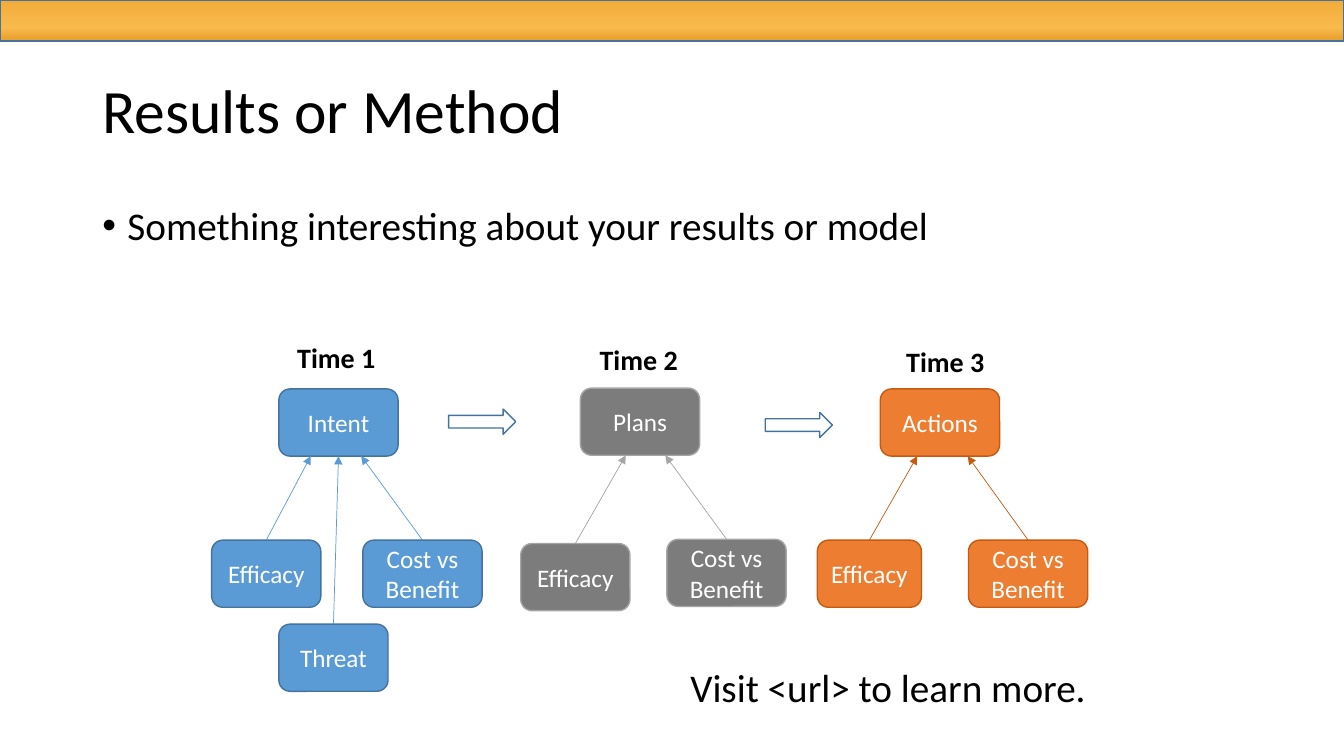
from copy import deepcopy
from dataclasses import dataclass

from lxml import etree
from pptx import Presentation
from pptx.dml.color import RGBColor
from pptx.enum.shapes import MSO_CONNECTOR, MSO_SHAPE
from pptx.enum.text import MSO_ANCHOR, PP_ALIGN
from pptx.oxml.ns import qn
from pptx.slide import Slide
from pptx.util import Inches, Length, Pt

RECT, ROUNDED, ARROW = MSO_SHAPE.RECTANGLE, MSO_SHAPE.ROUNDED_RECTANGLE, MSO_SHAPE.RIGHT_ARROW
STRAIGHT = MSO_CONNECTOR.STRAIGHT
TOP, MIDDLE = MSO_ANCHOR.TOP, MSO_ANCHOR.MIDDLE
LEFT, CENTER = PP_ALIGN.LEFT, PP_ALIGN.CENTER

# Grid of 160 columns by 90 rows
COLS, ROWS = 160, 90
UNIT = Inches(7.5) / ROWS
BOX_W, BOX_H = 14.2, 8


@dataclass(frozen=True)
class Theme:
    font: str = "Calibri"
    ink: str = "000000"
    paper: str = "FFFFFF"
    outline: str = "43739E"
    band: tuple[tuple[float, str], ...] = ((0, "F2AC3A"), (0.68, "F8BA4B"), (0.93, "EBA22F"))
    title: int = 44
    body: int = 28
    label: int = 20
    box: int = 18
    border: float = 1
    link: float = 0.5


@dataclass(frozen=True)
class Cause:
    text: str
    dx: float  # columns from the left edge of the stage box
    row: float
    width: float
    tip: float  # where its arrow meets the stage box, in columns


@dataclass(frozen=True)
class Stage:
    text: str
    col: float
    row: float
    fill: str
    border: str
    link: str
    label: str
    label_dx: float
    label_row: float
    causes: tuple[Cause, ...]


THEME = Theme()
COST = "Cost vs Benefit"
STAGES = (
    Stage("Intent", 33.2, 46.3, "5B9BD5", THEME.outline, "5B9BD5", "Time 1", 1, 40,
          (Cause("Threat", 0, 74.3, 13, 7.1),
           Cause("Efficacy", -8, 64.3, 13, 3.8),
           Cause(COST, 10, 64.3, BOX_W, 9.8))),
    Stage("Plans", 69.1, 46.2, "7C7C7C", "A5A5A5", "A5A5A5", "Time 2", 1.1, 40.2,
          (Cause("Efficacy", -7.1, 64.7, 13, 5.4),
           Cause(COST, 10.3, 64.2, BOX_W, 10.1))),
    Stage("Actions", 104.8, 46.3, "ED7D31", "C55A11", "C55A11", "Time 3", 1.9, 40.4,
          (Cause("Efficacy", -7.5, 64.3, 12.4, 4.4),
           Cause(COST, 10.5, 64.3, BOX_W, 10.4))),
)
STEP_ARROWS = ((53.4, 48.7), (91.1, 49.1))


def grid(*units: float) -> list[Length]:
    return [Length(round(u * UNIT)) for u in units]


def set_all(target, values: dict) -> None:
    for name, value in values.items():
        setattr(target, name, value)


def write(sp, text: str, size: float, color: str, bold: bool = False, align=LEFT,
          anchor=TOP, wrap: bool = True, spacing: float = 1, bullet: str = "") -> None:
    tf = sp.text_frame
    set_all(tf, {"word_wrap": wrap, "vertical_anchor": anchor})
    p = tf.paragraphs[0]
    set_all(p, {"alignment": align, "line_spacing": spacing})
    if bullet:
        pPr = p._p.get_or_add_pPr()
        pPr.set("marL", str(Inches(0.25)))
        pPr.set("indent", str(Inches(-0.25)))
        etree.SubElement(pPr, qn("a:buFont"), typeface="Arial")
        etree.SubElement(pPr, qn("a:buChar"), char=bullet)
    r = p.add_run()
    r.text = text
    set_all(r.font, {"name": THEME.font, "size": Pt(size), "bold": bold})
    r.font.color.rgb = RGBColor.from_string(color)


def add_text(s: Slide, at: tuple[float, ...], text: str, size: float, **style) -> None:
    write(s.shapes.add_textbox(*grid(*at)), text, size, THEME.ink, **style)


def add_shape(s: Slide, kind, at: tuple[float, ...], fill: str, border: str):
    sp = s.shapes.add_shape(kind, *grid(*at))
    sp.shadow.inherit = False
    sp.fill.solid()
    sp.fill.fore_color.rgb = RGBColor.from_string(fill)
    sp.line.color.rgb = RGBColor.from_string(border)
    sp.line.width = Pt(THEME.border)
    return sp


def add_box(s: Slide, at: tuple[float, ...], text: str, stage: Stage) -> None:
    sp = add_shape(s, ROUNDED, at, stage.fill, stage.border)
    write(sp, text, THEME.box, THEME.paper, align=CENTER, anchor=MIDDLE)


def add_link(s: Slide, ends: tuple[float, ...], color: str) -> None:
    link = s.shapes.add_connector(STRAIGHT, *grid(*ends))
    link.line.color.rgb = RGBColor.from_string(color)
    link.line.width = Pt(THEME.link)
    etree.SubElement(link.line._get_or_add_ln(), qn("a:tailEnd"), type="triangle")
    etree.SubElement(link._element.spPr, qn("a:effectLst"))


def add_band(s: Slide) -> None:
    sp = add_shape(s, RECT, (0, 0, COLS, 4.9), THEME.paper, THEME.outline)
    sp.fill.gradient()
    sp.fill.gradient_angle = 270
    stops = sp._element.spPr.find(qn("a:gradFill")).find(qn("a:gsLst"))
    stops.append(deepcopy(stops[-1]))
    for stop, (position, color) in zip(sp.fill.gradient_stops, THEME.band):
        stop.position = position
        stop.color.rgb = RGBColor.from_string(color)


def add_stage(s: Slide, stage: Stage) -> None:
    add_box(s, (stage.col, stage.row, BOX_W, BOX_H), stage.text, stage)
    for cause in stage.causes:
        col = stage.col + cause.dx
        add_box(s, (col, cause.row, cause.width, BOX_H), cause.text, stage)
        add_link(s, (col + cause.width / 2, cause.row,
                     stage.col + cause.tip, stage.row + BOX_H), stage.link)
    add_text(s, (stage.col + stage.label_dx, stage.label_row, 12, 5.3), stage.label,
             THEME.label, bold=True, wrap=False)


def main() -> None:
    prs = Presentation()
    set_all(prs, {"slide_width": grid(COLS)[0], "slide_height": grid(ROWS)[0]})
    s = prs.slides.add_slide(prs.slide_layouts[6])

    # Heading and bullet
    add_band(s)
    add_text(s, (11, 4.8, 138, 17.4), "Results or Method", THEME.title,
             anchor=MIDDLE, spacing=0.9)
    add_text(s, (11, 24, 138, 19.6), "Something interesting about your results or model",
             THEME.body, spacing=0.9, bullet="•")

    # Model diagram
    for stage in STAGES:
        add_stage(s, stage)
    for col, row in STEP_ARROWS:
        add_shape(s, ARROW, (col, row, 8, 3), THEME.paper, THEME.outline)

    # Closing line
    add_text(s, (81, 78.4, 68, 6.8), "Visit <url> to learn more.", THEME.body)
    prs.save("out.pptx")


if __name__ == "__main__":
    main()
